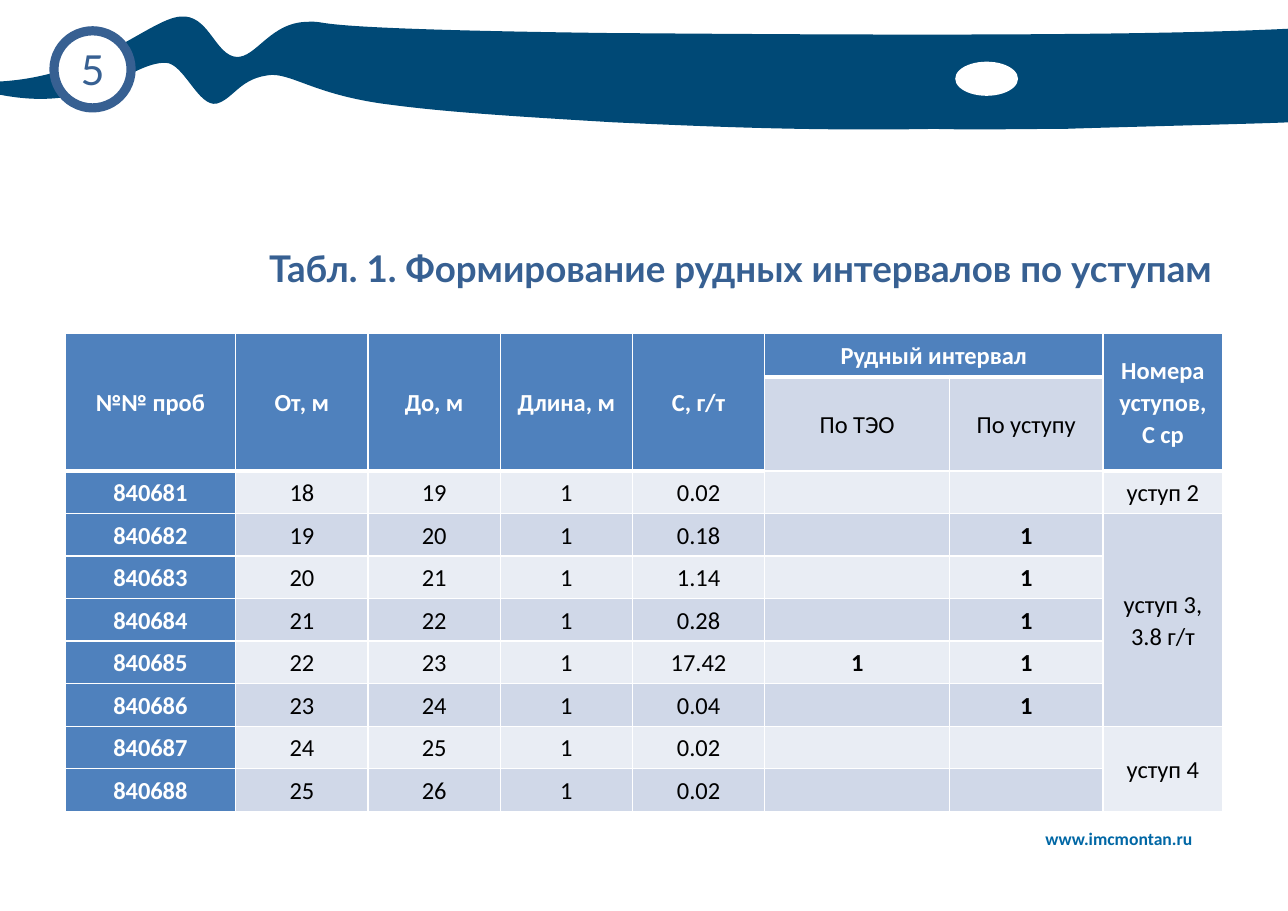
from lxml import etree
from pptx import Presentation
from pptx.dml.color import RGBColor
from pptx.enum.shapes import MSO_SHAPE
from pptx.enum.text import MSO_ANCHOR, PP_ALIGN
from pptx.oxml.ns import qn
from pptx.util import Inches, Pt

OVAL = MSO_SHAPE.OVAL
MIDDLE = MSO_ANCHOR.MIDDLE
LEFT, CENTER, RIGHT = PP_ALIGN.LEFT, PP_ALIGN.CENTER, PP_ALIGN.RIGHT

WHITE = RGBColor(0xFF, 0xFF, 0xFF)
BLACK = RGBColor(0x00, 0x00, 0x00)
NAVY = RGBColor(0x00, 0x49, 0x76)
STEEL = RGBColor(0x37, 0x60, 0x92)
LINK_BLUE = RGBColor(0x00, 0x67, 0xA5)
HEADER_BLUE = RGBColor(0x4F, 0x81, 0xBD)
BAND_DARK = RGBColor(0xD0, 0xD8, 0xE8)
BAND_LIGHT = RGBColor(0xE9, 0xED, 0xF4)

RIBBON_START = (0, 0.73)
RIBBON_CURVES = [
    ((0, 0.64), (0, 0.66), (0, 0.61)),
    ((0.88, 0.56), (1.36, 0.04), (1.64, 0.02)),
    ((1.88, 0), (1.94, 0.32), (2.11, 0.38)),
    ((2.3, 0.44), (2.42, 0.1), (2.75, 0.07)),
    ((3.1, 0.05), (2.43, 0.13), (5.54, 0.17)),
    ((7.03, 0.18), (10.13, 0.21), (11.71, 0.13)),
    ((11.72, 0.37), (11.7, 0.98), (11.7, 0.98)),
    ((11.56, 0.99), (9.9, 1.03), (9.66, 1.04)),
    ((9.25, 1.04), (8.87, 1.05), (8.48, 1.04)),
    ((7.35, 1.06), (6.44, 1.02), (5.56, 0.98)),
    ((4.73, 0.93), (4.06, 0.89), (3.54, 0.82)),
    ((2.89, 0.74), (2.67, 0.55), (2.47, 0.55)),
    ((2.18, 0.57), (2.13, 0.76), (1.97, 0.81)),
    ((1.8, 0.85), (1.67, 0.44), (1.5, 0.44)),
    ((1.17, 0.44), (0.87, 0.9), (0, 0.73)),
]

COLUMN_WIDTHS = [1.55, 1.2, 1.2, 1.2, 1.2, 1.68, 1.39, 1.09]
TABLE_HEIGHT = 4.17
HEADER_HEIGHTS = [0.39, 0.69]
HEADERS = ["№№ проб", "От, м", "До, м", "Длина, м", "С, г/т",
           "Рудный интервал", "", "Номера уступов, С ср"]
SUBHEADERS = ["", "", "", "", "", "По ТЭО", "По уступу", ""]
FIRST_SAMPLE, FIRST_DEPTH = 840681, 18
GRADES = ["0.02", "0.18", "1.14", "0.28", "17.42", "0.04", "0.02", "0.02"]
STUDY_MARKS = ["", "", "", "", "1", "", "", ""]
BENCH_MARKS = ["", "1", "1", "1", "1", "1", "", ""]
BENCHES = ["уступ 2", "уступ 3, 3.8 г/т", "", "", "", "", "уступ 4", ""]
INTERVAL_COLUMNS = (5, 6)
MERGES = [((0, column), (1, column)) for column in (0, 1, 2, 3, 4, 7)] + [
    ((0, 5), (0, 6)), ((3, 7), (7, 7)), ((8, 7), (9, 7))]


def write(frame, text, align, color, **formats):
    para = frame.paragraphs[0]
    para.alignment = align
    span = para.add_run()
    span.text = text
    for name, value in formats.items():
        setattr(span.font, name, value)
    span.font.color.rgb = color
    return para


def set_margins(target, left, top, right, bottom):
    margins = dict(left=left, top=top, right=right, bottom=bottom)
    for side, length in margins.items():
        setattr(target, f"margin_{side}", Inches(length))


def paint(shape, fill):
    shape.shadow.inherit = False
    shape.fill.solid()
    shape.fill.fore_color.rgb = fill
    shape.line.fill.background()


def bend_segments(shape, curves):
    anchors = [curve[-1] for curve in curves]
    left, top = (min(values) for values in zip(*anchors))
    segments = list(shape._element.iter(qn("a:lnTo")))
    for segment, curve in zip(segments, curves):
        bend = etree.Element(qn("a:cubicBezTo"))
        for x, y in curve:
            etree.SubElement(bend, qn("a:pt"), x=str(Inches(x - left)),
                             y=str(Inches(y - top)))
        segment.getparent().replace(segment, bend)


def add_ribbon(page, left, top):
    anchors = [(Inches(x), Inches(y)) for *_, (x, y) in RIBBON_CURVES]
    builder = page.shapes.build_freeform(*map(Inches, RIBBON_START))
    builder.add_line_segments(anchors, close=True)
    ribbon = builder.convert_to_shape(Inches(left), Inches(top))
    bend_segments(ribbon, RIBBON_CURVES)
    paint(ribbon, NAVY)
    emblem = page.shapes.add_shape(
        OVAL, Inches(left + 8.67), Inches(top + 0.43), Inches(0.57), Inches(0.31))
    paint(emblem, WHITE)


def add_page_badge(page, left, top, size, number):
    badge = page.shapes.add_shape(
        OVAL, Inches(left), Inches(top), Inches(size), Inches(size))
    paint(badge, WHITE)
    badge.line.color.rgb = STEEL
    badge.line.width = Pt(6)
    frame = badge.text_frame
    frame.vertical_anchor = MIDDLE
    frame.word_wrap = False
    set_margins(frame, 0, 0, 0, 0)
    write(frame, number, CENTER, STEEL, name="Lato", size=Pt(27))


def add_website(page, left, top, width, height):
    box = page.shapes.add_textbox(
        Inches(left), Inches(top), Inches(width), Inches(height))
    box.text_frame.word_wrap = True
    write(box.text_frame, "www.imcmontan.ru", LEFT, LINK_BLUE,
          name="Calibri", size=Pt(11.5), bold=True)


def place_title(page, left, top, width, height):
    title = page.shapes.title
    place = dict(left=left, top=top, width=width, height=height)
    for name, length in place.items():
        setattr(title, name, Inches(length))
    frame = title.text_frame
    frame.vertical_anchor = MIDDLE
    set_margins(frame, 0.11, 0.5, 0.11, 0.05)
    write(frame, "Табл. 1. Формирование рудных интервалов по уступам", RIGHT, STEEL,
          name="Lato", size=Pt(24), bold=True)


def set_borders(cell, widths):
    properties = cell._tc.get_or_add_tcPr()
    for side, width in widths.items():
        line = etree.SubElement(properties, qn(f"a:ln{side}"), w=str(Pt(width)))
        solid = etree.SubElement(line, qn("a:solidFill"))
        etree.SubElement(solid, qn("a:srgbClr"), val=str(WHITE))


def is_header(row, column):
    return row == 0 or column == 0 or (row == 1 and column not in INTERVAL_COLUMNS)


def cell_fill(row, column):
    if is_header(row, column):
        return HEADER_BLUE
    return BAND_DARK if row % 2 else BAND_LIGHT


def format_cell(cell, row, column, text):
    below_header = 0 < row < 3 and is_header(row - 1, column)
    header_bottom = row < 2 and is_header(row, column)
    set_borders(cell, {"L": 1, "R": 1, "T": 3 if below_header else 1,
                       "B": 3 if header_bottom else 1})
    cell.fill.solid()
    cell.fill.fore_color.rgb = cell_fill(row, column)
    cell.vertical_anchor = MIDDLE
    set_margins(cell, 0.07, 0, 0.07, 0)
    if text:
        header = is_header(row, column)
        mark = row > 1 and column in INTERVAL_COLUMNS
        para = write(cell.text_frame, text, CENTER, WHITE if header else BLACK,
                     name="Calibri", size=Pt(16), bold=header or mark)
        para.line_spacing = 1.07


def sample_rows():
    columns = zip(GRADES, STUDY_MARKS, BENCH_MARKS, BENCHES)
    return [[str(FIRST_SAMPLE + index), str(FIRST_DEPTH + index),
             str(FIRST_DEPTH + index + 1), "1", *values]
            for index, values in enumerate(columns)]


def add_sample_table(page, left, top):
    samples = sample_rows()
    rows = [HEADERS, SUBHEADERS] + samples
    sample_height = (TABLE_HEIGHT - sum(HEADER_HEIGHTS)) / len(samples)
    heights = HEADER_HEIGHTS + [sample_height] * len(samples)
    table = page.shapes.add_table(
        len(rows), len(COLUMN_WIDTHS), Inches(left), Inches(top),
        Inches(sum(COLUMN_WIDTHS)), Inches(TABLE_HEIGHT)).table
    for column, width in zip(table.columns, COLUMN_WIDTHS):
        column.width = Inches(width)
    for row, height in zip(table.rows, heights):
        row.height = Inches(height)
    for row, values in enumerate(rows):
        for column, text in enumerate(values):
            format_cell(table.cell(row, column), row, column, text)
    for first, last in MERGES:
        table.cell(*first).merge(table.cell(*last))


def main():
    deck = Presentation()
    deck.slide_width = Inches(11.69)
    deck.slide_height = Inches(8.27)
    page = deck.slides.add_slide(deck.slide_layouts[5])
    add_ribbon(page, 0, 0.13)
    add_website(page, 9.39, 7.47, 1.72, 0.29)
    add_page_badge(page, 0.49, 0.28, 0.7, "5")
    add_sample_table(page, 0.59, 3.03)
    place_title(page, 0.58, 1.54, 10.53, 1.34)
    deck.save("out.pptx")


if __name__ == "__main__":
    main()
